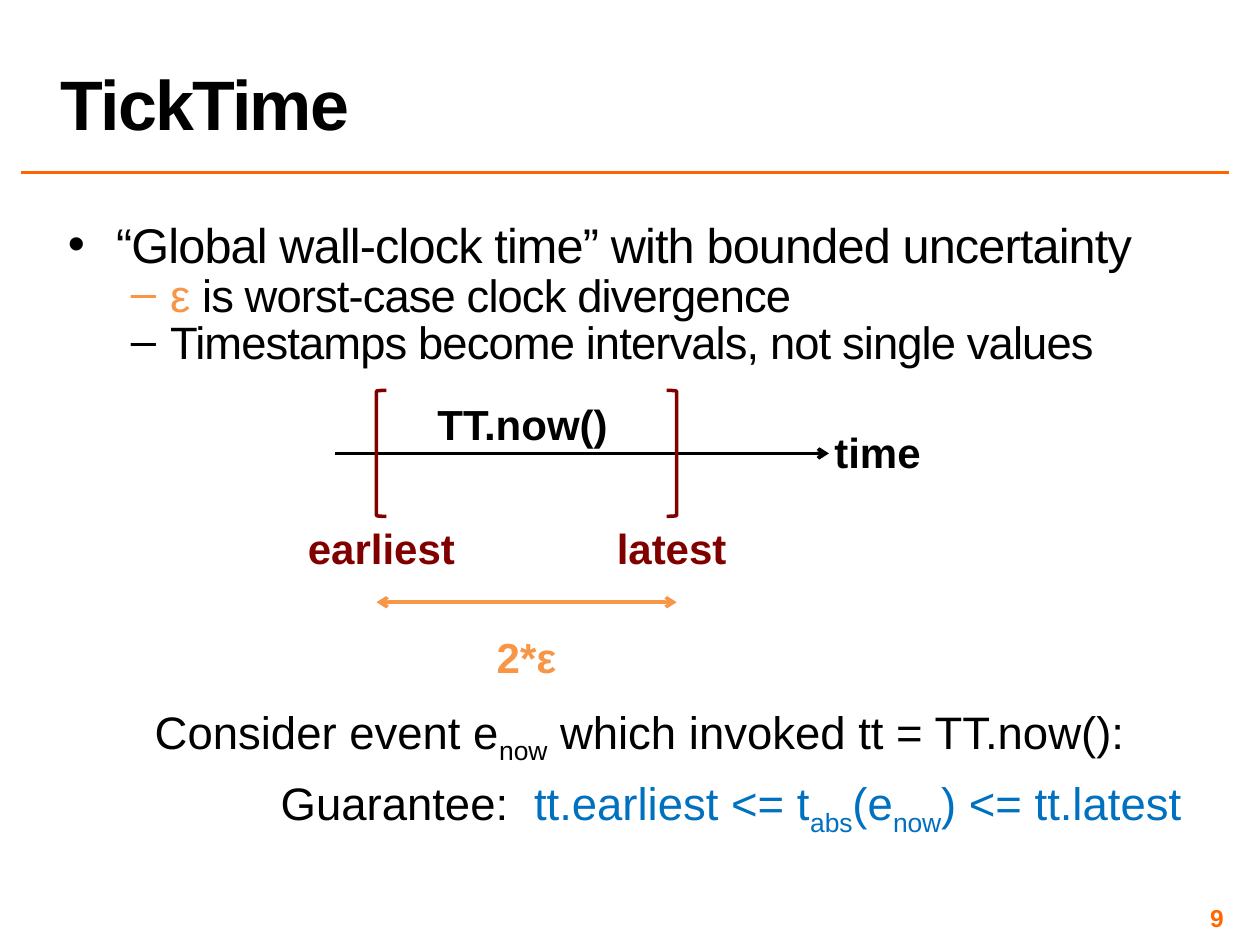
from dataclasses import dataclass

from lxml.etree import SubElement
from pptx import Presentation
from pptx.dml.color import RGBColor
from pptx.enum.shapes import MSO_CONNECTOR, MSO_SHAPE
from pptx.enum.text import MSO_ANCHOR as Anchor, MSO_AUTO_SIZE as AutoSize, PP_ALIGN as Align
from pptx.oxml.ns import qn
from pptx.util import Cm, Pt


@dataclass(frozen=True)
class Theme:
    font: str = "Arial"
    ink: str = "000000"
    accent: str = "FF6600"
    bound: str = "800000"
    epsilon: str = "F79646"
    formula: str = "0070C0"
    title_size: float = 40
    bullet_size: float = 27.8
    sub_bullet_size: float = 25.9
    statement_size: float = 26
    label_size: float = 24
    number_size: float = 14
    line_width: float = 2


class SlideBuilder:
    def __init__(self, presentation, theme):
        self.theme = theme
        self.slide = presentation.slides.add_slide(presentation.slide_layouts[1])

    def _place(self, shape, left, top, width, height):
        shape.left, shape.top = Cm(left), Cm(top)
        shape.width, shape.height = Cm(width), Cm(height)

    def _set_insets(self, frame, inset):
        frame.margin_left = frame.margin_right = Cm(inset)
        frame.margin_top = frame.margin_bottom = Cm(inset)

    def _add_run(self, paragraph, text, size, color, bold=False, tracking=0, subscript=False):
        """Tracking is in hundredths of a point."""
        run = paragraph.add_run()
        run.text = text
        run.font.name, run.font.size, run.font.bold = self.theme.font, Pt(size), bold
        run.font.color.rgb = RGBColor.from_string(color)
        properties = run._r.get_or_add_rPr()
        if tracking:
            properties.set("spc", str(tracking))
        if subscript:
            properties.set("baseline", "-25000")

    def _indent(self, paragraph, left, first=0):
        properties = paragraph._p.get_or_add_pPr()
        properties.set("marL", str(Cm(left)))
        properties.set("indent", str(Cm(first)))

    def _style_line(self, shape, color):
        shape.line.color.rgb = RGBColor.from_string(color)
        shape.line.width = Pt(self.theme.line_width)

    def title(self, text, *box):
        holder = self.slide.shapes.title
        self._place(holder, *box)
        frame = holder.text_frame
        frame.auto_size, frame.vertical_anchor = AutoSize.NONE, Anchor.BOTTOM
        heading = frame.paragraphs[0]
        heading.alignment, heading.line_spacing = Align.LEFT, 0.8
        self._add_run(heading, text, self.theme.title_size, self.theme.ink, True, -100)

    def bullets(self, items, *box):
        """Each item is a level and its (text, color) runs."""
        holder = self.slide.placeholders[1]
        self._place(holder, *box)
        frame = holder.text_frame
        frame.auto_size = AutoSize.NONE
        self._set_insets(frame, 0.1)
        styles = [
            (self.theme.bullet_size, 0.8, 0, 0.97, -0.97),
            (self.theme.sub_bullet_size, 0.75, 2, 2.06, -0.79),
        ]
        for index, (level, runs) in enumerate(items):
            size, spacing, before, left, first = styles[level]
            item = frame.add_paragraph() if index else frame.paragraphs[0]
            item.level, item.line_spacing = level, spacing
            item.space_before, item.space_after = Pt(before), Pt(2)
            self._indent(item, left, first)
            for text, color in runs:
                self._add_run(item, text, size, color, tracking=-50)

    def line(self, x1, x2, y, color, head=False, tail=False):
        """Horizontal line; head and tail put an arrow at its start and end."""
        connector = self.slide.shapes.add_connector(
            MSO_CONNECTOR.STRAIGHT, Cm(x1), Cm(y), Cm(x2), Cm(y))
        self._style_line(connector, color)
        outline = connector.line._get_or_add_ln()
        for tag, wanted in (("a:headEnd", head), ("a:tailEnd", tail)):
            if wanted:
                SubElement(outline, qn(tag)).set("type", "arrow")
        SubElement(connector._element.spPr, qn("a:effectLst"))

    def bracket(self, kind, color, *box):
        shape = self.slide.shapes.add_shape(kind, *map(Cm, box))
        shape.shadow.inherit = False
        shape.fill.background()
        self._style_line(shape, color)

    def label(self, text, center, top, width, color):
        box = (center - width / 2, top, width, 1.27)
        frame = self.slide.shapes.add_textbox(*map(Cm, box)).text_frame
        frame.word_wrap, frame.auto_size = False, AutoSize.SHAPE_TO_FIT_TEXT
        caption = frame.paragraphs[0]
        caption.alignment = Align.CENTER
        self._add_run(caption, text, self.theme.label_size, color, True)

    def statement(self, lines, *box):
        """Each line is a left indent and its (text, color, subscript) runs."""
        frame = self.slide.shapes.add_textbox(*map(Cm, box)).text_frame
        frame.word_wrap = True
        size = self.theme.statement_size
        for index, (indent, runs) in enumerate(lines):
            sentence = frame.add_paragraph() if index else frame.paragraphs[0]
            sentence.space_before = Pt(size * 0.2)
            self._indent(sentence, indent)
            for text, color, subscript in runs:
                self._add_run(sentence, text, size, color, subscript=subscript)

    def page_number(self, text, *box):
        frame = self.slide.shapes.add_textbox(*map(Cm, box)).text_frame
        frame.word_wrap, frame.vertical_anchor = True, Anchor.MIDDLE
        self._set_insets(frame, 0.1)
        number = frame.paragraphs[0]
        number.alignment = Align.RIGHT
        self._add_run(number, text, self.theme.number_size, self.theme.accent, True)


def main():
    presentation = Presentation()
    presentation.slide_width, presentation.slide_height = Cm(25.4), Cm(19.05)
    theme = Theme()
    page = SlideBuilder(presentation, theme)

    page.line(0.43, 24.77, 3.48, theme.accent)
    page.title("TickTime", 0.97, 0.05, 23.8, 2.97)
    page.bullets([
        (0, [("“Global wall-clock time” with bounded uncertainty", theme.ink)]),
        (1, [("ε ", theme.epsilon), ("is worst-case clock divergence", theme.ink)]),
        (1, [("Timestamps become intervals, not single values", theme.ink)]),
    ], 1.27, 4.45, 23.5, 3.43)

    earliest, latest, bracket_width = 7.59, 13.64, 0.2
    page.line(6.76, 16.71, 9.14, theme.ink, tail=True)
    page.label("time", 17.69, 8.48, 2.26, theme.ink)
    for name, kind, left, width in (
        ("earliest", MSO_SHAPE.LEFT_BRACKET, earliest, 3.5),
        ("latest", MSO_SHAPE.RIGHT_BRACKET, latest - bracket_width, 2.74),
    ):
        page.bracket(kind, theme.bound, left, 7.87, bracket_width, 2.54)
        page.label(name, left + bracket_width / 2, 10.41, width, theme.bound)
    middle = (earliest + latest) / 2
    page.label("TT.now()", middle - 0.08, 7.9, 3.96, theme.ink)
    page.line(earliest, latest, 12.14, theme.epsilon, head=True, tail=True)
    page.label("2*ε", middle, 12.6, 1.73, theme.epsilon)

    page.statement([
        (1.27, [("Consider event e", theme.ink, False), ("now", theme.ink, True),
                (" which invoked tt = TT.now():", theme.ink, False)]),
        (3.81, [("Guarantee:  ", theme.ink, False),
                ("tt.earliest <= t", theme.formula, False), ("abs", theme.formula, True),
                ("(e", theme.formula, False), ("now", theme.formula, True),
                (") <= tt.latest", theme.formula, False)]),
    ], 1.6, 14.07, 22.86, 2.87)
    page.page_number("9", 18.85, 18.21, 5.92, 0.58)

    presentation.save("out.pptx")


if __name__ == "__main__":
    main()
